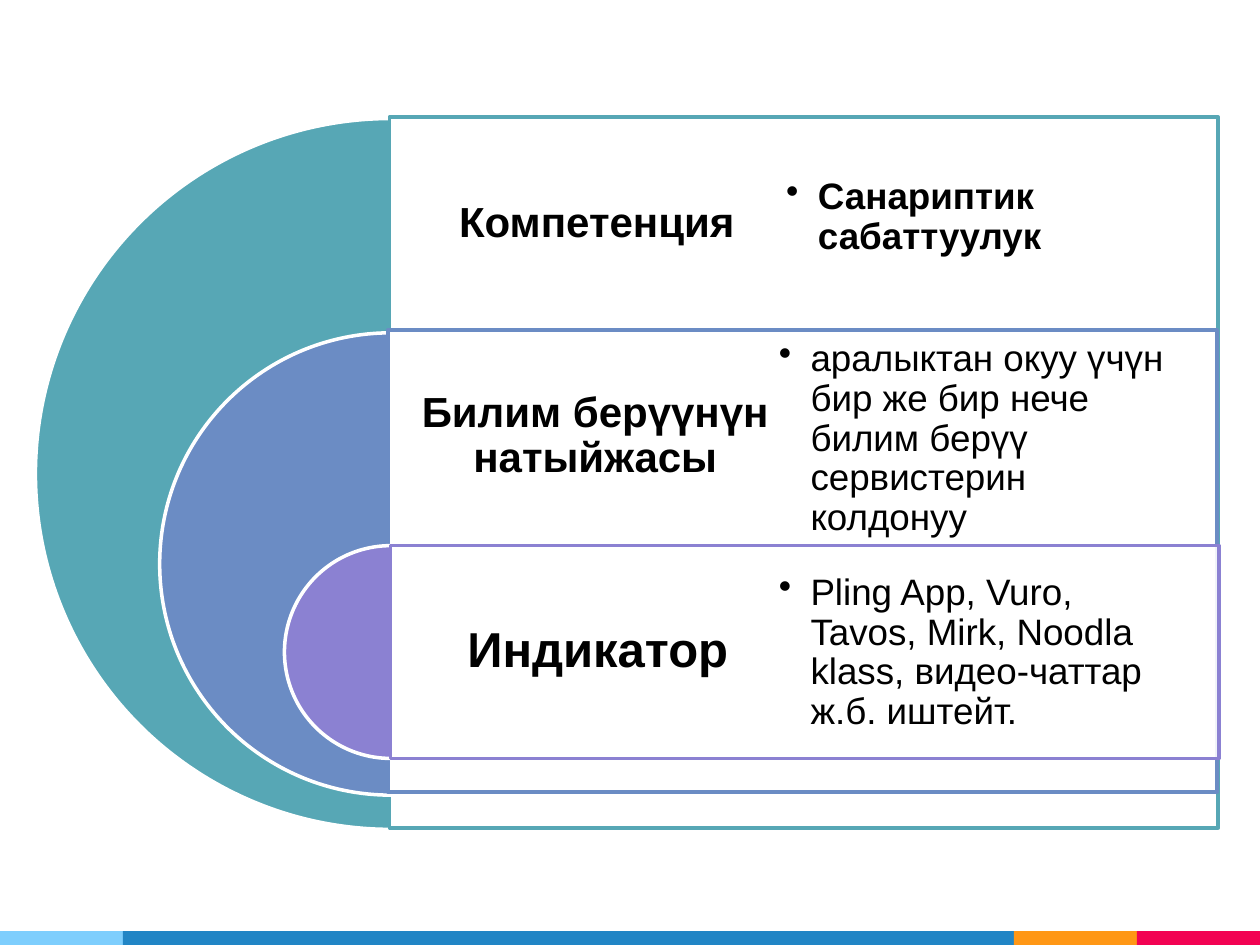
from lxml import etree
from pptx import Presentation
from pptx.dml.color import RGBColor
from pptx.enum.shapes import MSO_SHAPE
from pptx.enum.text import MSO_ANCHOR, PP_ALIGN
from pptx.oxml.ns import qn
from pptx.util import Cm, Pt

RECT, PIE = MSO_SHAPE.RECTANGLE, MSO_SHAPE.CHORD.PIE
MIDDLE = MSO_ANCHOR.MIDDLE
LEFT, CENTER = PP_ALIGN.LEFT, PP_ALIGN.CENTER

COLORS = {
    "white": "FFFFFF", "black": "000000",
    "teal": "57A7B5", "blue": "6B8CC4", "violet": "8B81D2",
    "sky": "7ECEFD", "navy": "2185C5", "orange": "FF9715", "red": "F20253",
}


def add_shape(kind, box, fill, line=None):
    shape = slide.shapes.add_shape(kind, *[Cm(v) for v in box])
    shape.shadow.inherit = False
    shape.fill.solid()
    shape.fill.fore_color.rgb = RGBColor.from_string(COLORS[fill])
    if line:
        shape.line.color.rgb = RGBColor.from_string(COLORS[line])
        shape.line.width = Pt(2)
    else:
        shape.line.fill.background()
    return shape


def add_text(box, text, size, bold, inset, bullet=False):
    frame = slide.shapes.add_textbox(*[Cm(v) for v in box]).text_frame
    frame.word_wrap = True
    frame.vertical_anchor = MIDDLE
    frame.margin_left = frame.margin_right = Cm(inset)
    frame.margin_top = frame.margin_bottom = Cm(inset)
    para = frame.paragraphs[0]
    para.text = text
    para.alignment = LEFT if bullet else CENTER
    para.line_spacing = 0.9
    if bullet:
        para.level = 1
        props = para._p.get_or_add_pPr()
        props.set("marL", str(Cm(0.64)))
        props.set("indent", str(-Cm(0.64)))
        etree.SubElement(props, qn("a:buChar")).set("char", "•")
    font = para.font
    font.name = "Arial"
    font.size = Pt(size)
    font.bold = bold
    font.color.rgb = RGBColor.from_string(COLORS["black"])


deck = Presentation()
deck.slide_width, deck.slide_height = Cm(25.4), Cm(19.05)
slide = deck.slides.add_slide(deck.slide_layouts[6])

# Footer stripe
left = 0
for width, color in [(2.48, "sky"), (17.96, "navy"), (2.48, "orange"), (2.48, "red")]:
    add_shape(RECT, (left, 18.77, width, 0.28), color)
    left += width

# Nested half discs, each with a panel and its label
MID, WIDE, ROW = 7.88, 16.71, 4.29
HALF = 8.36
levels = [
    # color, size, disc top, panel left, panel top, label, font size, inset
    ("teal", 14.33, 2.39, 7.85, 2.36, "Компетенция", 24, 0.25),
    ("blue", 9.32, 6.71, 7.82, 6.65, "Билим берүүнүн натыйжасы", 24, 0.25),
    ("violet", 4.29, 11, 7.87, 11, "Индикатор", 28, 0.3),
]
for color, size, top, left, edge, label, points, inset in levels:
    disc = add_shape(PIE, (MID - size / 2, top, size, size), color, "white")
    disc.adjustments[0], disc.adjustments[1] = 54, 162
    panel = add_shape(RECT, (left, edge, WIDE, size), "white", color)
    tint = panel.fill._xPr.find(".//" + qn("a:srgbClr"))
    etree.SubElement(tint, qn("a:alpha")).set("val", "90000")
    add_text((left, edge, HALF, ROW), label, points, True, inset)

# Bulleted details
details = [
    (15.62, 2.24, "Санариптик сабаттуулук", True),
    (15.47, 6.71, "аралыктан окуу үчүн бир же бир нече билим берүү сервистерин колдонуу", False),
    (15.47, 11.02, "Pling App, Vuro, Tavos, Mirk, Noodla klass, видео-чаттар ж.б. иштейт.", False),
]
for left, top, text, bold in details:
    add_text((left, top, HALF, ROW), text, 21, bold, 0.23, bullet=True)

deck.save("out.pptx")
